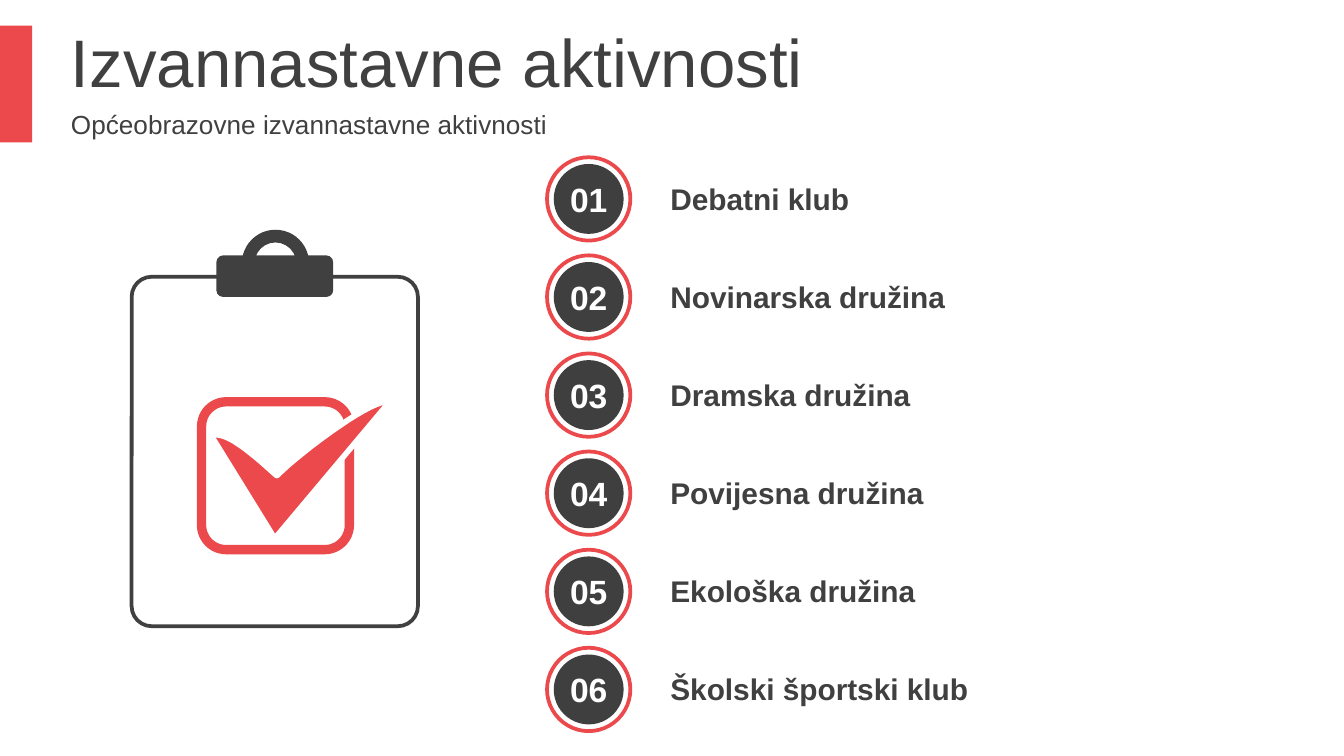
"""Build a slide listing extracurricular activities beside a clipboard."""
from pptx import Presentation
from pptx.dml.color import RGBColor
from pptx.enum.shapes import MSO_SHAPE
from pptx.enum.text import MSO_ANCHOR, PP_ALIGN
from pptx.util import Inches, Pt

RECTANGLE = MSO_SHAPE.RECTANGLE
ROUNDED = MSO_SHAPE.ROUNDED_RECTANGLE
ARC = MSO_SHAPE.BLOCK_ARC
OVAL = MSO_SHAPE.OVAL
MIDDLE = MSO_ANCHOR.MIDDLE
LEFT, CENTER = PP_ALIGN.LEFT, PP_ALIGN.CENTER

RED, DARK, DISC, WHITE = "EB494B", "404040", "3F3F3F", "FFFFFF"
FONT = "Arial"

TITLE = "Izvannastavne aktivnosti"
SUBTITLE = "Općeobrazovne izvannastavne aktivnosti"
ACTIVITIES = [
    "Debatni klub",
    "Novinarska družina",
    "Dramska družina",
    "Povijesna družina",
    "Ekološka družina",
    "Školski športski klub",
]

ROW_TOP, ROW_PITCH = 1.17, 0.73
RING_LEFT, RING_SIZE, DISC_SIZE = 4.07, 0.62, 0.52
LABEL_LEFT = 4.89

TICK_START = (2.06, 3.54)
TICK_RIGHT_CURVE = [TICK_START, (2.25, 3.35), (2.82, 2.93), (2.89, 3.0)]
TICK_BOTTOM = [(2.05, 4.0), (2.04, 4.0)]
TICK_LEFT_CURVE = [(1.57, 3.24), (1.69, 3.2), (1.9, 3.4), TICK_START]
CURVE_STEPS = 16
UNITS_PER_INCH = 1000


def color(value):
    return RGBColor.from_string(value)


def paint(shape, fill, line=None, width=0):
    shape.shadow.inherit = False
    shape.fill.solid()
    shape.fill.fore_color.rgb = color(fill)
    if line:
        shape.line.color.rgb = color(line)
        shape.line.width = Pt(width)
    else:
        shape.line.fill.background()


def add_shape(page, kind, area, fill, line=None, width=0, adjustments=()):
    shape = page.shapes.add_shape(kind, *map(Inches, area))
    paint(shape, fill, line, width)
    for index, value in enumerate(adjustments):
        shape.adjustments[index] = value


def add_text(page, text, area, size, ink=DARK, bold=False, align=LEFT, wrap=True):
    box = page.shapes.add_textbox(*map(Inches, area))
    frame = box.text_frame
    frame.word_wrap = wrap
    frame.vertical_anchor = MIDDLE
    para = frame.paragraphs[0]
    para.text = text
    para.alignment = align
    para.font.name = FONT
    para.font.size = Pt(size)
    para.font.bold = bold
    para.font.color.rgb = color(ink)


def curve_points(controls):
    points = []
    for step in range(CURVE_STEPS + 1):
        t = step / CURVE_STEPS
        weights = ((1 - t) ** 3, 3 * t * (1 - t) ** 2, 3 * t * t * (1 - t), t ** 3)
        points.append(tuple(
            sum(weight * value for weight, value in zip(weights, axis))
            for axis in zip(*controls)
        ))
    return points


def add_tick(page):
    outline = curve_points(TICK_RIGHT_CURVE) + TICK_BOTTOM + curve_points(TICK_LEFT_CURVE)
    points = [(round(x * UNITS_PER_INCH), round(y * UNITS_PER_INCH)) for x, y in outline]
    builder = page.shapes.build_freeform(*points[0], scale=Inches(1) / UNITS_PER_INCH)
    builder.add_line_segments(points[1:], close=True)
    paint(builder.convert_to_shape(), RED, WHITE, 3)


def add_clipboard(page):
    add_shape(page, ROUNDED, (0.98, 2.06, 2.13, 2.6), WHITE, DARK, 2, [0.07])
    add_shape(page, ROUNDED, (1.61, 1.9, 0.87, 0.31), DARK)
    add_shape(page, ARC, (1.8, 1.71, 0.5, 0.5), DARK, adjustments=[108, 213.89, 0.19])
    add_shape(page, ROUNDED, (1.5, 2.99, 1.1, 1.1), WHITE, RED, 5)
    add_tick(page)


def add_activity(page, number, name):
    top = ROW_TOP + (number - 1) * ROW_PITCH
    inset = (RING_SIZE - DISC_SIZE) / 2
    add_shape(page, OVAL, (RING_LEFT, top, RING_SIZE, RING_SIZE), WHITE, RED, 2)
    add_shape(page, OVAL, (RING_LEFT + inset, top + inset, DISC_SIZE, DISC_SIZE), DISC)
    add_text(page, f"{number:02}", (RING_LEFT + 0.07, top + 0.11, 0.48, 0.4), 18,
             WHITE, True, CENTER, False)
    add_text(page, name, (LABEL_LEFT, top + 0.12, 4.8, 0.37), 16, bold=True)


def main():
    deck = Presentation()
    deck.slide_width = Inches(10)
    deck.slide_height = deck.slide_width * 9 // 16
    page = deck.slides.add_slide(deck.slide_layouts[6])
    add_shape(page, RECTANGLE, (0, 0.19, 0.24, 0.87), RED)
    add_text(page, TITLE, (0.43, 0.14, 7.64, 0.63), 36)
    add_text(page, SUBTITLE, (0.43, 0.77, 7.64, 0.31), 14)
    add_clipboard(page)
    for number, name in enumerate(ACTIVITIES, 1):
        add_activity(page, number, name)
    deck.save("out.pptx")


if __name__ == "__main__":
    main()
